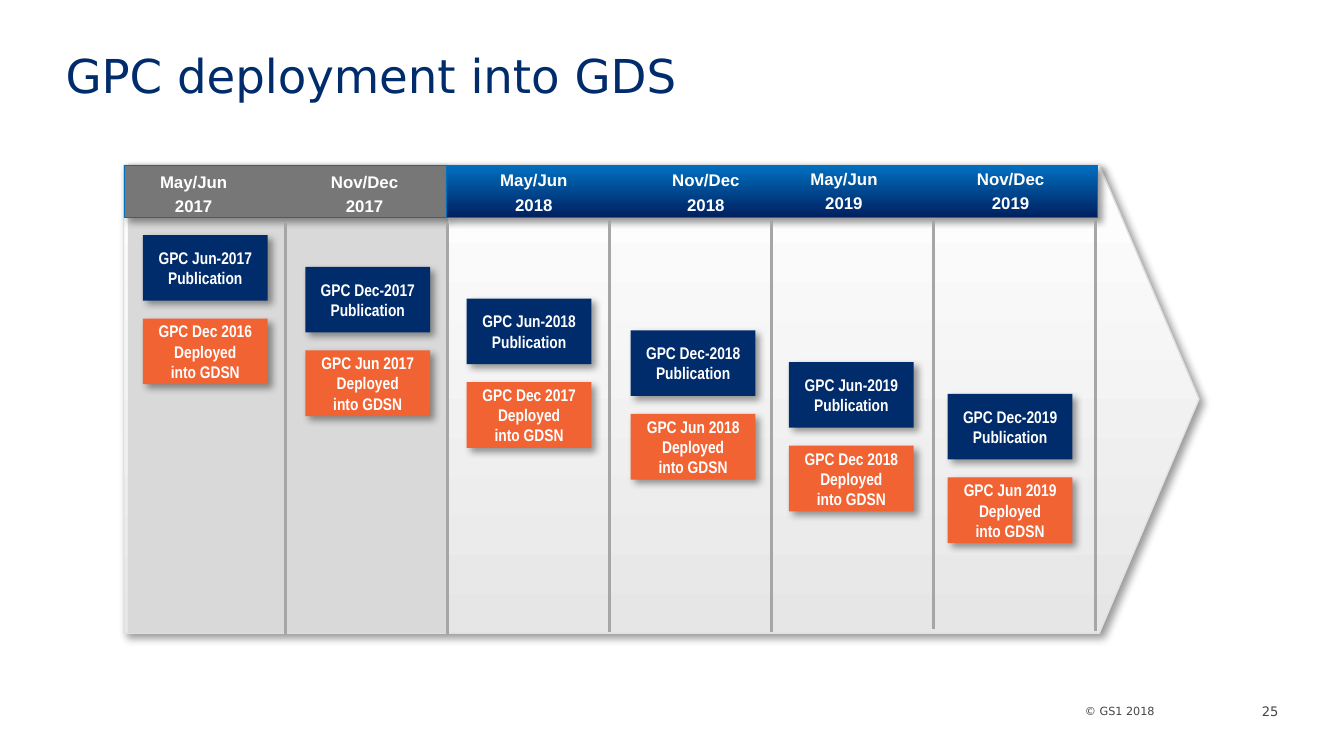
from dataclasses import dataclass

from lxml import etree
from pptx import Presentation
from pptx import util as u
from pptx.dml.color import RGBColor
from pptx.enum import shapes, text
from pptx.oxml import ns

Cm, Pt = u.Cm, u.Pt
KIND, ALIGN = shapes.MSO_SHAPE, text.PP_ALIGN


@dataclass(frozen=True)
class Theme:
    navy: str = "002C6C"
    orange: str = "F26334"
    white: str = "FFFFFF"
    ink: str = "454545"
    past: str = "D9D9D9"
    past_bar: str = "777777"
    rule: str = "A6A6A6"
    edge: str = "E1E1E1"
    bar_edge: str = "0070C0"
    bar: tuple = ("0070C0", "002060")
    arrow: tuple = ("E6E6E6", "FFFFFF")
    sans: str = "DejaVu Sans"
    bold: str = "Arial"
    slim: str = "Arial Narrow"
    title: float = 25
    label: float = 9
    num: float = 7
    foot: float = 6


T = Theme()

# Columns: date, label centre, card left (cm from the arrow), rule top
COLS = [
    ("May/Jun", 2017, 1.32, 0.36, 1.09),
    ("Nov/Dec", 2017, 4.55, 3.43, 1.09),
    ("May/Jun", 2018, 7.75, 6.48, 1.04),
    ("Nov/Dec", 2018, 11.0, 9.58, 1.04),
    ("May/Jun", 2019, 13.61, 12.57, 0.99),
    ("Nov/Dec", 2019, 16.76, 15.57, 1.02),
]
# Each column publishes one release and deploys the one before it
RELEASES = [("Dec", 2016)] + [
    ("Jun" if i % 2 == 0 else "Dec", col[1]) for i, col in enumerate(COLS)
]


def rgb(code):
    return RGBColor.from_string(code)


def effects(shape, shadow=False):
    """Clear the inherited shadow, or set the soft outer one."""
    props = shape._element.spPr
    for old in props.findall(ns.qn("a:effectLst")):
        props.remove(old)
    node = etree.SubElement(props, ns.qn("a:effectLst"))
    if shadow:
        outer = etree.SubElement(
            node, ns.qn("a:outerShdw"), blurRad=str(Pt(4)), dist=str(Pt(3)),
            dir=str(45 * 60000), algn="tl", rotWithShape="0")
        tint = etree.SubElement(outer, ns.qn("a:srgbClr"), val="000000")
        etree.SubElement(tint, ns.qn("a:alpha"), val="40000")


def block(slide, x, y, w, h, fill, line=None, width=0.25, angle=270,
          kind=KIND.RECTANGLE, shadow=True):
    shape = slide.shapes.add_shape(kind, Cm(x), Cm(y), Cm(w), Cm(h))
    if isinstance(fill, tuple):
        shape.fill.gradient()
        shape.fill.gradient_angle = angle
        for stop, code in zip(shape.fill.gradient_stops, fill):
            stop.color.rgb = rgb(code)
    else:
        shape.fill.solid()
        shape.fill.fore_color.rgb = rgb(fill)
    if line:
        shape.line.color.rgb = rgb(line)
        shape.line.width = Pt(width)
    else:
        shape.line.fill.background()
    effects(shape, shadow)
    return shape


def write(shape, words, size, font, color, align=ALIGN.LEFT, bold=False,
          anchor=text.MSO_ANCHOR.MIDDLE, inset=(0.25, 0.13, 0.25, 0.13)):
    frame = shape.text_frame
    frame.word_wrap = True
    frame.vertical_anchor = anchor
    (frame.margin_left, frame.margin_top,
     frame.margin_right, frame.margin_bottom) = map(Cm, inset)
    frame.text = words
    for i, para in enumerate(frame.paragraphs):
        para.alignment = align
        if i:
            para.space_before = Pt(0.24 * size)
        para.font.size = Pt(size)
        para.font.name = font
        para.font.bold = bold
        para.font.color.rgb = rgb(color)


def note(slide, x, y, w, h, words, *style, **more):
    box = slide.shapes.add_textbox(Cm(x), Cm(y), Cm(w), Cm(h))
    write(box, words, *style, **more)


def arrow(slide, x, y, w, h):
    # Body and the shaded past year
    body = block(slide, x, y, w, h, T.arrow, T.edge, 0.75, 90, KIND.PENTAGON)
    body.adjustments[0] = 0.213
    block(slide, x + 0.08, y - 0.03, 6.05, h + 0.03, T.past, shadow=False)
    # Date bars
    block(slide, x, y, 6.1, 0.99, T.past_bar, T.bar_edge)
    block(slide, x + 6.1, y, 12.29, 0.99, T.bar, T.bar_edge)
    # Columns
    for i, (months, year, mid, left, top) in enumerate(COLS):
        rule(slide, x + 3.06 * (i + 1), y + top, 7.77)
        note(slide, x + mid - 0.95, y - 0.03 * (i // 2), 1.9, 1.09,
             f"{months}\n{year}", T.label, T.bold, T.white, ALIGN.CENTER, True)
        cards(slide, x + left, y + 1.32 + 0.6 * i, i)


def rule(slide, x, y, h):
    line = slide.shapes.add_connector(
        shapes.MSO_CONNECTOR.STRAIGHT, Cm(x), Cm(y), Cm(x), Cm(y + h))
    line.line.color.rgb = rgb(T.rule)
    line.line.width = Pt(1.5)
    effects(line)


def cards(slide, x, y, i):
    (old, then), (new, now) = RELEASES[i:i + 2]
    pair = [
        (0, T.navy, f"GPC {new}-{now} Publication"),
        (1.58, T.orange, f"GPC {old} {then} Deployed\vinto GDSN"),
    ]
    for drop, fill, words in pair:
        card = block(slide, x, y + drop, 2.36, 1.24, fill)
        write(card, words, T.label, T.slim, T.white, ALIGN.CENTER, True)


def footer(slide, x, y, w):
    flat = (0, 0, 0, 0)
    note(slide, x, y + 0.08, w - 2.34, 0.28, "© GS1 2018", T.foot, T.sans,
         T.ink, ALIGN.RIGHT, anchor=text.MSO_ANCHOR.TOP, inset=flat)
    note(slide, x + w - 0.69, y, 0.69, 0.41, "25", T.num, T.sans,
         T.ink, ALIGN.RIGHT, inset=flat)


def main():
    deck = Presentation()
    deck.slide_width, deck.slide_height = Cm(25.4), Cm(14.28)
    slide = deck.slides.add_slide(deck.slide_layouts[6])
    note(slide, 1.24, 0.48, 22.91, 1.88, "GPC deployment into GDS",
         T.title, T.sans, T.navy, inset=(0, 0.13, 0.25, 0.13))
    arrow(slide, 2.34, 3.12, 20.32, 8.84)
    footer(slide, 14.12, 13.23, 10.04)
    deck.save("out.pptx")


if __name__ == "__main__":
    main()
